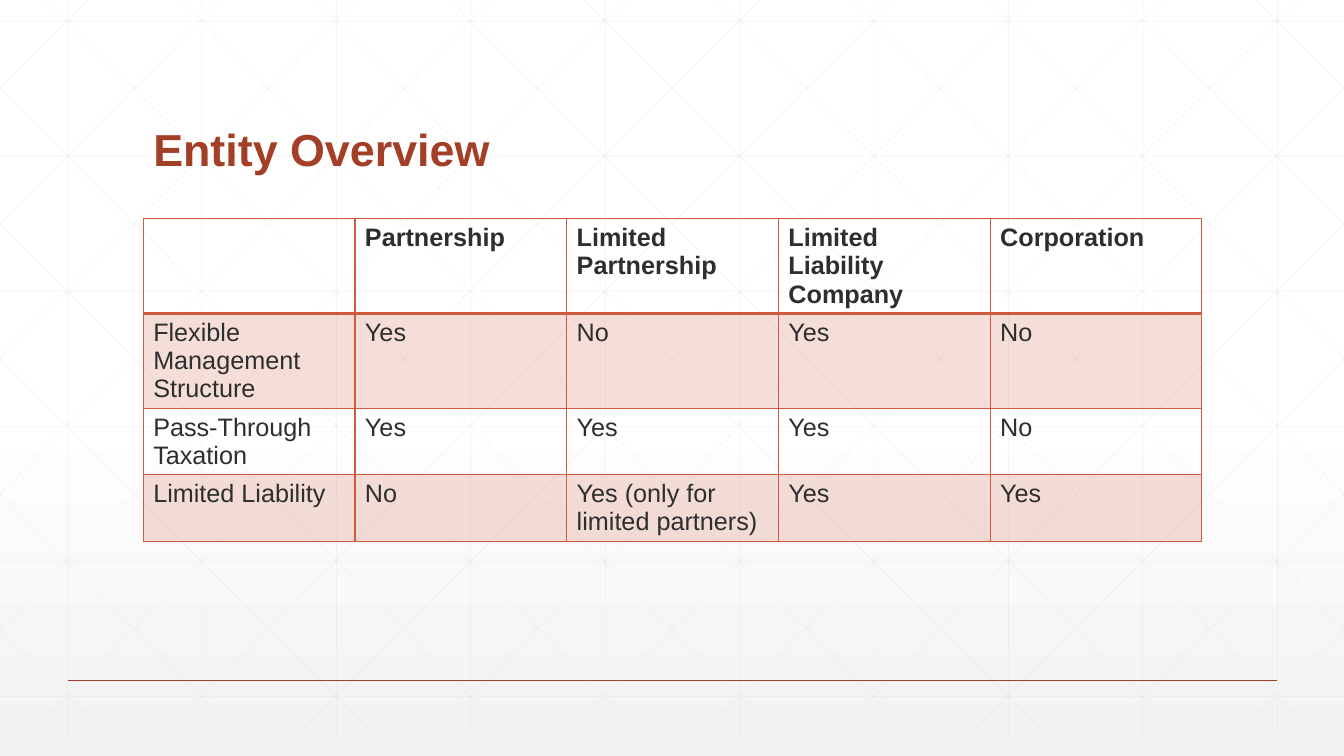
from lxml.etree import SubElement
from pptx import Presentation
from pptx.dml.color import RGBColor
from pptx.enum.shapes import MSO_CONNECTOR
from pptx.enum.text import MSO_ANCHOR, MSO_AUTO_SIZE, PP_ALIGN
from pptx.oxml.ns import qn
from pptx.util import Inches, Pt

WIDTH, HEIGHT = 13.33, 7.5
FONT = "Arial"
RUST, ORANGE, INK, GRID = "A43F27", "D15A3E", "2D2E2D", "D9D9D9"
GRID_TOP, GRID_BOTTOM = -0.21, 7.29
STEP = 4 / 3
DIAGONAL_RUN = 7.46
ROW_HEIGHTS = [0.94, 0.94, 0.66, 0.66]
ENTITIES = [
    ["", "Partnership", "Limited Partnership", "Limited Liability Company", "Corporation"],
    ["Flexible Management Structure", "Yes", "No", "Yes", "No"],
    ["Pass-Through Taxation", "Yes", "Yes", "Yes", "No"],
    ["Limited Liability", "No", "Yes (only for limited partners)", "Yes", "Yes"],
]


def rgb(color):
    return RGBColor.from_string(color)


def set_alpha(fill, percent):
    """Make a solid fill partly transparent."""
    color = fill._xPr.find(qn("a:solidFill"))[0]
    SubElement(color, qn("a:alpha"), val=str(percent * 1000))


def style_font(font, size, color, bold):
    font.name = FONT
    font.size = Pt(size)
    font.bold = bold
    font.color.rgb = rgb(color)


def add_line(shapes, x1, y1, x2, y2, color, width, alpha=100):
    line = shapes.add_connector(
        MSO_CONNECTOR.STRAIGHT, Inches(x1), Inches(y1), Inches(x2), Inches(y2))
    line.line.color.rgb = rgb(color)
    line.line.width = Pt(width)
    if alpha < 100:
        set_alpha(line.line.fill, alpha)
    SubElement(line.element.spPr, qn("a:effectLst"))


def set_background(s):
    fill = s.background.fill
    fill.gradient()
    fill.gradient_angle = 270
    for stop, position, color in zip(fill.gradient_stops, (0.53, 1), ("FFFFFF", "F2F2F2")):
        stop.position = position
        stop.color.rgb = rgb(color)


def add_grid(s):
    """Draw verticals, horizontals and mirrored diagonals cut at the slide sides."""
    shapes = s.shapes.add_group_shape().shapes
    lines = [(x, GRID_TOP, x, GRID_BOTTOM) for x in (0.67 + STEP * i for i in range(10))]
    lines += [(0, y, WIDTH, y) for y in (0.21 + 1.34 * i for i in range(6))]
    slope = (GRID_BOTTOM - GRID_TOP) / DIAGONAL_RUN
    for i in range(-5, 10):
        start = 0.25 + STEP * i
        x1, x2 = max(start, 0), min(start + DIAGONAL_RUN, WIDTH)
        y1, y2 = (GRID_TOP + (x - start) * slope for x in (x1, x2))
        lines += [(x1, y1, x2, y2), (WIDTH - x1, y1, WIDTH - x2, y2)]
    for ends in lines:
        add_line(shapes, *ends, GRID, 0.5, alpha=25)


def add_title(s, text):
    title = s.shapes.title
    title.left, title.top = Inches(1.42), Inches(0.55)
    title.width, title.height = Inches(10.5), Inches(1.25)
    s.shapes.element.append(title.element)
    tf = title.text_frame
    tf.text = text
    tf.word_wrap = True
    tf.auto_size = MSO_AUTO_SIZE.NONE
    tf.vertical_anchor = MSO_ANCHOR.BOTTOM
    p = tf.paragraphs[0]
    p.alignment = PP_ALIGN.LEFT
    p.line_spacing = 0.9
    style_font(p.runs[0].font, 32, RUST, True)


def set_borders(cell, bottom_width):
    tcPr = cell._tc.get_or_add_tcPr()
    for side, width in (("L", 1), ("R", 1), ("T", 1), ("B", bottom_width)):
        ln = SubElement(tcPr, qn(f"a:ln{side}"), w=str(Pt(width)))
        SubElement(SubElement(ln, qn("a:solidFill")), qn("a:srgbClr"), val=ORANGE)


def add_entity_table(s):
    table = s.shapes.add_table(
        len(ENTITIES), len(ENTITIES[0]), Inches(1.42), Inches(2.17),
        Inches(10.5), Inches(sum(ROW_HEIGHTS))).table
    for row, height in zip(table.rows, ROW_HEIGHTS):
        row.height = Inches(height)
    for i, texts in enumerate(ENTITIES):
        for j, text in enumerate(texts):
            cell = table.cell(i, j)
            cell.text = text
            style_font(cell.text_frame.paragraphs[0].font, 18, INK, i == 0)
            for r in cell.text_frame.paragraphs[0].runs:
                style_font(r.font, 18, INK, i == 0)
            set_borders(cell, 2 if i == 0 else 1)
            if i % 2:
                cell.fill.solid()
                cell.fill.fore_color.rgb = rgb(ORANGE)
                set_alpha(cell.fill, 20)
            else:
                cell.fill.background()


def main():
    prs = Presentation()
    prs.slide_width, prs.slide_height = Inches(WIDTH), Inches(HEIGHT)
    s = prs.slides.add_slide(prs.slide_layouts.get_by_name("Title Only"))
    set_background(s)
    add_grid(s)
    add_line(s.shapes, 0.67, 6.75, 12.67, 6.75, RUST, 1)
    add_title(s, "Entity Overview")
    add_entity_table(s)
    prs.save("out.pptx")


if __name__ == "__main__":
    main()
